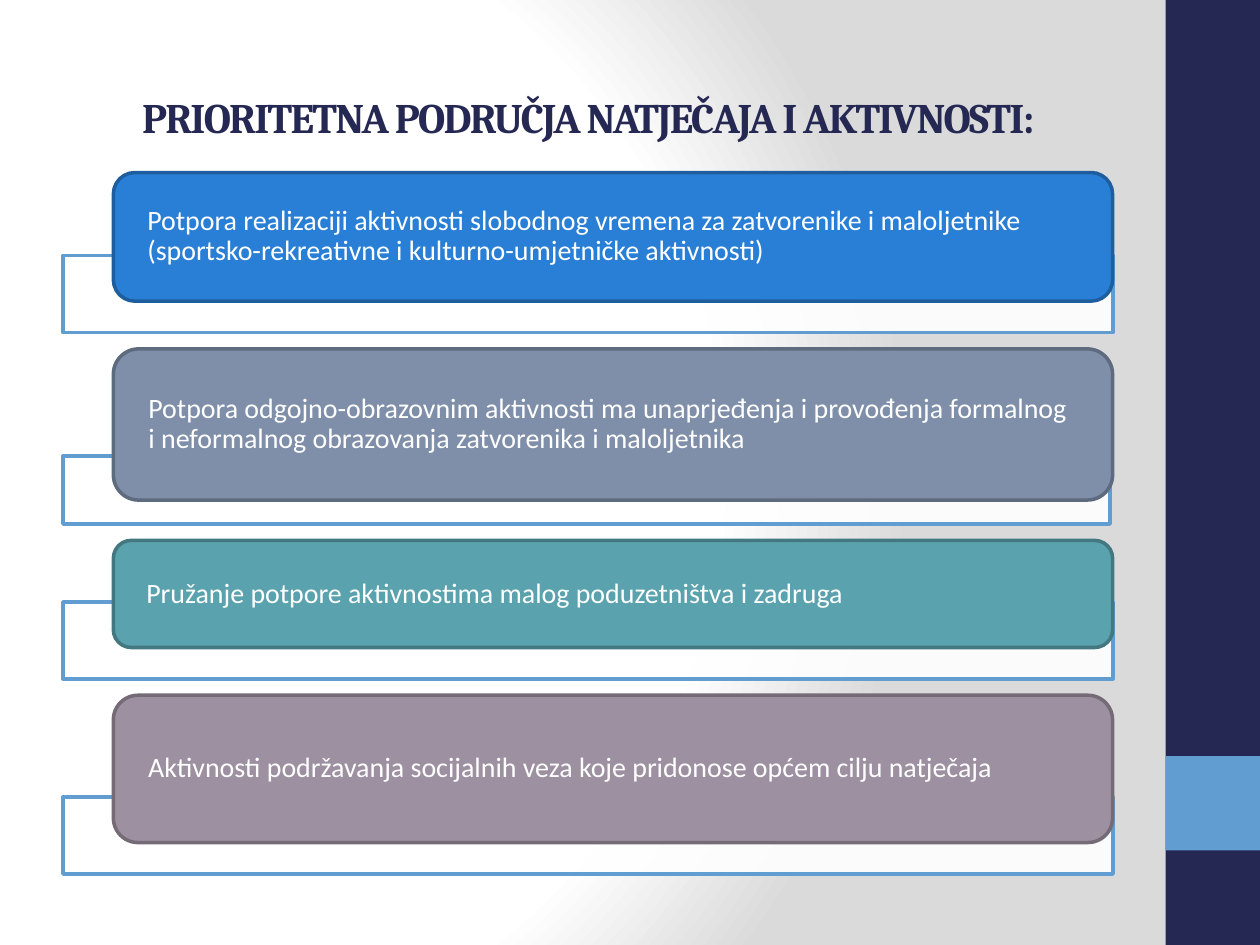
from dataclasses import dataclass

from lxml import etree
from pptx import Presentation
from pptx.dml.color import RGBColor
from pptx.enum.shapes import MSO_SHAPE
from pptx.enum.text import MSO_ANCHOR, MSO_AUTO_SIZE, PP_ALIGN
from pptx.oxml import parse_xml
from pptx.oxml.ns import nsdecls, qn
from pptx.util import Pt

RECT, ROUND = MSO_SHAPE.RECTANGLE, MSO_SHAPE.ROUNDED_RECTANGLE
MIDDLE, NO_FIT = MSO_ANCHOR.MIDDLE, MSO_AUTO_SIZE.NONE
LEFT, CENTER = PP_ALIGN.LEFT, PP_ALIGN.CENTER


@dataclass(frozen=True)
class Theme:
    navy: str = "242852"
    blue: str = "629DD1"
    white: str = "FFFFFF"
    gray: str = "DADADA"
    head: str = "Cambria"
    body: str = "Calibri"
    head_size: int = 24
    body_size: int = 16
    line: int = 2


THEME = Theme()

# Stack layout: each card overlaps the frame behind it
TOP, GAP = 98.6, 9.3
FRAME_X, CARD_X, CARD_W = 36, 64.8, 571

# Text, fill, line, card height, drop of frame below card, frame width, frame height
CARDS = [
    ("Potpora realizaciji aktivnosti slobodnog vremena za zatvorenike i maloljetnike "
     "(sportsko-rekreativne i kulturno-umjetničke aktivnosti)",
     "297FD5", "1E5E9E", 73.5, 18, 600, 44),
    ("Potpora odgojno-obrazovnim aktivnosti ma unaprjeđenja i provođenja formalnog "
     "i neformalnog obrazovanja zatvorenika i maloljetnika",
     "7F8FA9", "5E6A7D", 86.4, 13.7, 598.3, 39),
    ("Pružanje potpore aktivnostima malog poduzetništva i zadruga",
     "5AA2AE", "437881", 61.2, 18, 600, 44),
    ("Aktivnosti podržavanja socijalnih veza koje pridonose općem cilju natječaja",
     "9D90A0", "746B76", 84.2, 18, 600, 44),
]


def rgb(color):
    return RGBColor.from_string(color)


def add_box(slide, kind, x, y, w, h, fill, line=None):
    box = slide.shapes.add_shape(kind, Pt(x), Pt(y), Pt(w), Pt(h))
    box.shadow.inherit = False
    box.fill.solid()
    box.fill.fore_color.rgb = rgb(fill)
    if line:
        box.line.color.rgb = rgb(line)
        box.line.width = Pt(THEME.line)
    else:
        box.line.fill.background()
    return box


def set_text(shape, text, font, size, color, align, bold=False):
    frame = shape.text_frame
    frame.text = text
    frame.word_wrap = True
    frame.auto_size = NO_FIT
    frame.vertical_anchor = MIDDLE
    para = frame.paragraphs[0]
    para.alignment = align
    para.font.name, para.font.size, para.font.bold = font, Pt(size), bold
    para.font.color.rgb = rgb(color)
    return para


def set_back(slide):
    fill = slide.background.fill
    fill.gradient()
    old = slide.element.find(".//" + qn("a:gradFill"))
    stops = [(0, THEME.white), (75000, THEME.white), (100000, THEME.gray)]
    marks = "".join(f'<a:gs pos="{pos}"><a:srgbClr val="{color}"/></a:gs>'
                    for pos, color in stops)
    new = parse_xml(
        f'<a:gradFill {nsdecls("a")} rotWithShape="1"><a:gsLst>{marks}</a:gsLst>'
        '<a:path path="circle"><a:fillToRect l="20000" t="50000" r="100000" b="50000"/>'
        '</a:path></a:gradFill>')
    old.getparent().replace(old, new)


def add_title(slide, text):
    title = slide.shapes.title
    title.left, title.top, title.width, title.height = Pt(36), Pt(21.6), Pt(600), Pt(90)
    para = set_text(title, text, THEME.head, THEME.head_size, THEME.navy, CENTER, True)
    para.runs[0].font.bold = True
    para.runs[0].font.element.set("spc", "-100") if hasattr(
        para.runs[0].font, "element") else para.runs[0]._r.get_or_add_rPr().set("spc", "-100")


def add_frame(slide, y, w, h):
    frame = add_box(slide, RECT, FRAME_X, y, w, h, THEME.white, THEME.blue)
    color = frame.fill._xPr.find(".//" + qn("a:srgbClr"))
    etree.SubElement(color, qn("a:alpha")).set("val", "90000")


def add_card(slide, y, h, text, fill, line):
    card = add_box(slide, ROUND, CARD_X, y, CARD_W, h, fill, line)
    para = set_text(card, text, THEME.body, THEME.body_size, THEME.white, LEFT)
    para.line_spacing = 0.9
    frame = card.text_frame
    frame.margin_left = frame.margin_right = Pt(15.84)
    frame.margin_top = frame.margin_bottom = 0


def main():
    deck = Presentation()
    deck.slide_width, deck.slide_height = Pt(720), Pt(540)
    slide = deck.slides.add_slide(deck.slide_layouts[5])

    # Background and side band
    set_back(slide)
    add_box(slide, RECT, 666, 0, 54, 540, THEME.navy)
    add_box(slide, RECT, 666, 432, 54, 54, THEME.blue)

    add_title(slide, "PRIORITETNA PODRUČJA NATJEČAJA I AKTIVNOSTI:")

    # Stack of cards
    y = TOP
    for text, fill, line, high, drop, wide, tall in CARDS:
        end = y + high + drop
        add_frame(slide, end - tall, wide, tall)
        add_card(slide, y, high, text, fill, line)
        y = end + GAP

    deck.save("out.pptx")


if __name__ == "__main__":
    main()
